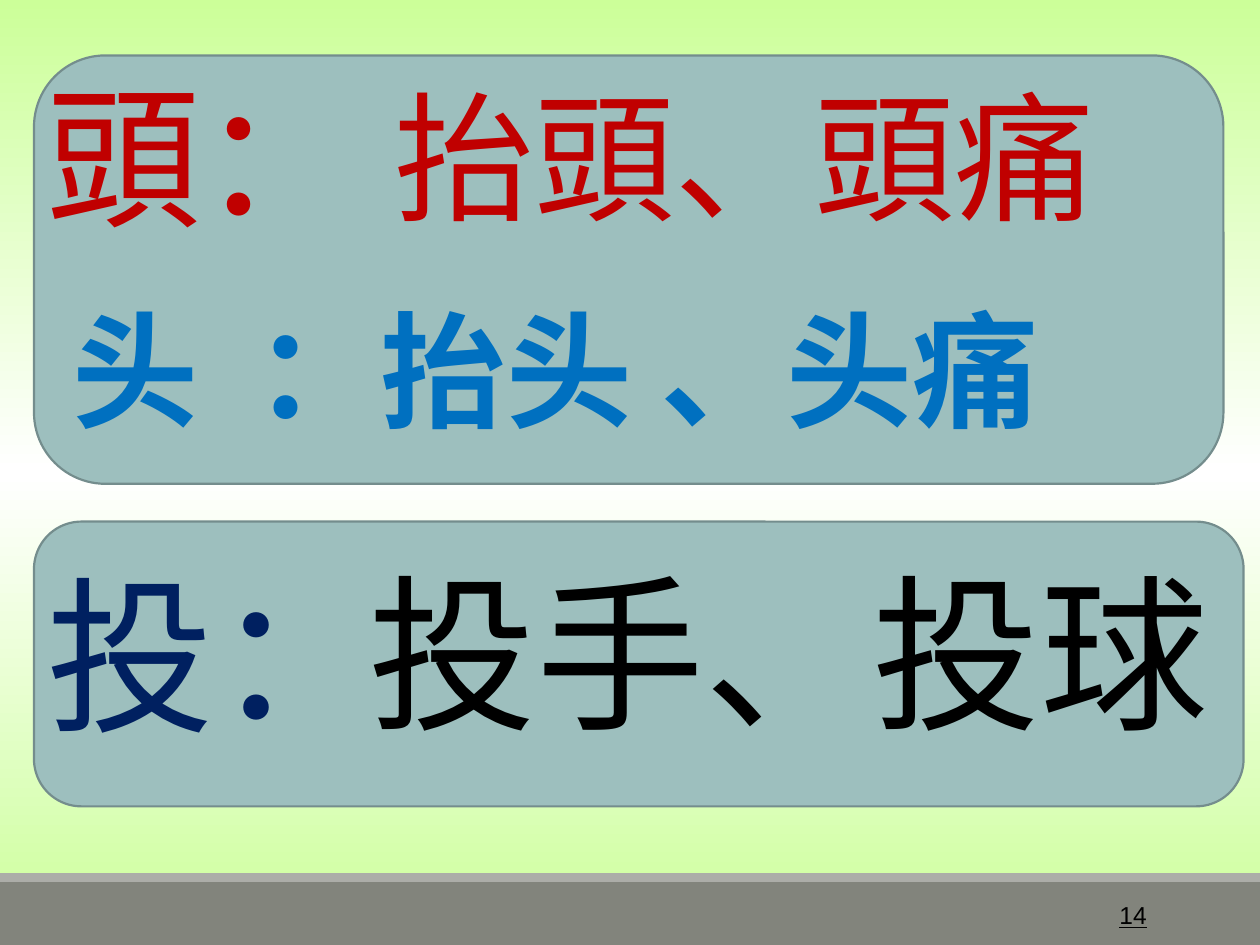
from copy import deepcopy
from dataclasses import dataclass

from lxml import etree
from pptx import Presentation
from pptx.dml.color import RGBColor
from pptx.enum import shapes, text
from pptx.oxml import ns
from pptx.slide import Slide
from pptx.util import Inches, Pt


@dataclass(frozen=True)
class Theme:
    glow: str = "CCFF99"
    white: str = "FFFFFF"
    bar: str = "82847C"
    strip: str = "ACADA8"
    card: str = "9DBFBE"
    edge: str = "748D8D"
    red: str = "C00000"
    navy: str = "002060"
    blue: str = "0070C0"
    black: str = "000000"
    sans: str = "Roboto"
    plain: str = "Arial"
    huge: int = 96
    head: int = 88
    large: int = 80
    body: int = 72
    note: int = 14


@dataclass(frozen=True)
class Box:
    left: float
    top: float
    width: float
    height: float

    def place(self) -> tuple:
        return tuple(Inches(n) for n in (self.left, self.top, self.width, self.height))


@dataclass(frozen=True)
class Panel:
    box: Box
    fill: str
    edge: str = ""


@dataclass(frozen=True)
class Label:
    box: Box
    words: str
    size: int
    color: str
    face: str
    bold: bool = False
    tab: float = 0


THEME = Theme()

PANELS = (
    Panel(Box(0, 7, 10, 0.5), THEME.bar),
    Panel(Box(0, 6.93, 10, 0.07), THEME.strip),
    Panel(Box(0.27, 4.14, 9.6, 2.26), THEME.card, THEME.edge),
    Panel(Box(0.27, 0.44, 9.44, 3.4), THEME.card, THEME.edge),
)

LABELS = (
    Label(Box(0.27, 0.44, 2.67, 1.58), "頭：", THEME.head, THEME.red, THEME.sans),
    Label(Box(3.03, 0.51, 5.81, 1.45), "抬頭、頭痛", THEME.large, THEME.red, THEME.sans),
    Label(Box(0.27, 4.33, 2.87, 1.7), "投：", THEME.huge, THEME.navy, THEME.sans),
    Label(Box(2.83, 4.31, 6.87, 1.7), "投手、投球", THEME.huge, THEME.black, THEME.sans),
    Label(Box(0.48, 2.27, 8.42, 1.31), "头\t：抬头 、头痛", THEME.body, THEME.blue,
          THEME.plain, bold=True, tab=1.44),
)

PAGE = Label(Box(8.12, 7.06, 1.08, 0.4), "14", THEME.note, THEME.black, THEME.plain)


def rgb(code: str) -> RGBColor:
    return RGBColor.from_string(code)


def paint_back(slide: Slide) -> None:
    fill = slide.background.fill
    fill.gradient()
    fill.gradient_angle = 90
    stops = next(slide.element.iter(ns.qn("a:gsLst")))
    while len(stops) < 3:
        stops.append(deepcopy(stops[0]))
    colors = (THEME.glow, THEME.white, THEME.glow)
    for stop, color, place in zip(fill.gradient_stops, colors, (0, 0.5, 1)):
        stop.color.rgb = rgb(color)
        stop.position = place


def draw_panel(slide: Slide, panel: Panel) -> None:
    kinds = shapes.MSO_SHAPE
    kind = kinds.ROUNDED_RECTANGLE if panel.edge else kinds.RECTANGLE
    shape = slide.shapes.add_shape(kind, *panel.box.place())
    shape.shadow.inherit = False
    shape.fill.solid()
    shape.fill.fore_color.rgb = rgb(panel.fill)
    if panel.edge:
        shape.line.color.rgb = rgb(panel.edge)
        shape.line.width = Pt(1.25)
    else:
        shape.line.fill.background()


def draw_label(slide: Slide, label: Label):
    frame = slide.shapes.add_textbox(*label.box.place()).text_frame
    frame.word_wrap = False
    frame.auto_size = text.MSO_AUTO_SIZE.SHAPE_TO_FIT_TEXT
    para = frame.paragraphs[0]
    para.text = label.words
    if label.tab:
        tabs = etree.SubElement(para._p.get_or_add_pPr(), ns.qn("a:tabLst"))
        etree.SubElement(tabs, ns.qn("a:tab"), pos=str(Inches(label.tab)), algn="l")
    font = para.font
    font.name = label.face
    font.size = Pt(label.size)
    font.bold = label.bold
    font.color.rgb = rgb(label.color)
    return frame


def draw_page(slide: Slide) -> None:
    frame = draw_label(slide, PAGE)
    frame.auto_size = text.MSO_AUTO_SIZE.NONE
    frame.word_wrap = True
    frame.vertical_anchor = text.MSO_ANCHOR.MIDDLE
    para = frame.paragraphs[0]
    para.alignment = text.PP_ALIGN.RIGHT
    para.font.underline = True


def main() -> None:
    deck = Presentation()
    deck.slide_width, deck.slide_height = Inches(10), Inches(7.5)
    slide = deck.slides.add_slide(deck.slide_layouts[6])
    paint_back(slide)
    for panel in PANELS:
        draw_panel(slide, panel)
    for label in LABELS:
        draw_label(slide, label)
    draw_page(slide)
    deck.save("out.pptx")


if __name__ == "__main__":
    main()
